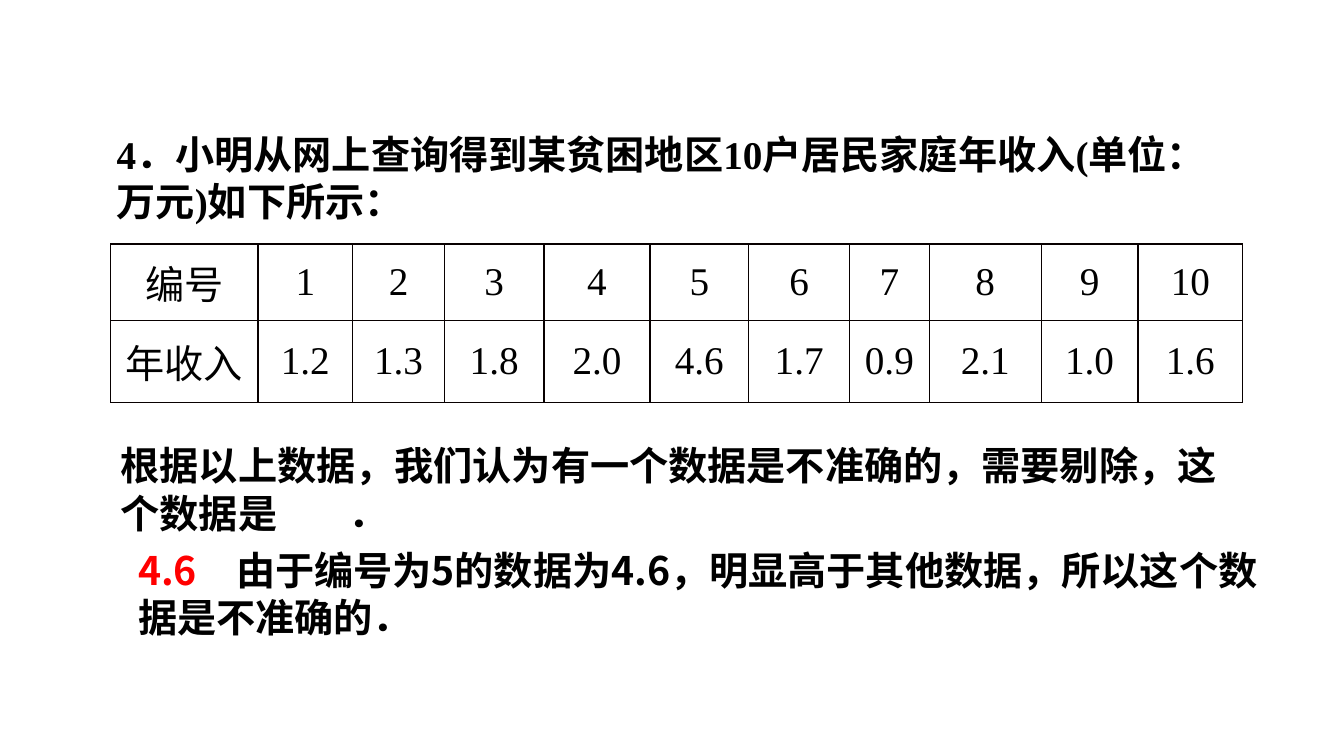
from lxml.etree import SubElement
from pptx import Presentation
from pptx.dml.color import RGBColor
from pptx.enum.text import MSO_ANCHOR as ANCHOR, MSO_AUTO_SIZE as AUTO, PP_ALIGN as ALIGN
from pptx.oxml.ns import qn
from pptx.util import Cm, Pt

BLACK = RGBColor(0, 0, 0)
RED = RGBColor(0xFF, 0, 0)
BORDER = RGBColor(0x08, 0, 0)
SANS, SERIF, CJK = "Calibri", "Times New Roman", "Noto Sans CJK SC"

INCOMES = ["1.2", "1.3", "1.8", "2.0", "4.6", "1.7", "0.9", "2.1", "1.0", "1.6"]
ROWS = [["编号", *map(str, range(1, len(INCOMES) + 1))], ["年收入", *INCOMES]]
COL_WIDTHS = [3.71, 2.39, 2.31, 2.51, 2.67, 2.49, 2.54, 2.01, 2.82, 2.44, 2.64]
ROW_HEIGHTS = [1.93, 2.06]


class SlideBuilder:
    """Holds the text style and the current slide, and adds elements to it."""

    def __init__(self, s):
        self.s = s
        self.style = {"size": Pt(28), "bold": True}

    def set_all(self, target, values):
        for name, value in values.items():
            setattr(target, name, value)

    def run(self, p, text, font, color=BLACK, **extra):
        r = p.add_run()
        r.text = text
        self.set_all(r.font, {**self.style, "name": font, **extra})
        r.font.color.rgb = color
        SubElement(r.font._element, qn("a:ea"), typeface=CJK)

    def text(self, left, top, width, height, runs, tab=None):
        sp = self.s.shapes.add_textbox(Cm(left), Cm(top), Cm(width), Cm(height))
        tf = sp.text_frame
        self.set_all(tf, {"word_wrap": True, "auto_size": AUTO.SHAPE_TO_FIT_TEXT,
                          "margin_top": Cm(0.2), "margin_bottom": Cm(0.05)})
        p = tf.paragraphs[0]
        p.line_spacing = Pt(33.8)
        if tab:
            tabs = SubElement(p._p.get_or_add_pPr(), qn("a:tabLst"))
            SubElement(tabs, qn("a:tab"), pos=str(Cm(tab)), algn="l")
        for text, font, *color in runs:
            extra = {"underline": True} if text == "\t" else {}
            self.run(p, text, font, *color, **extra)

    def borders(self, cell):
        tc_pr = cell._tc.get_or_add_tcPr()
        for side in ("lnL", "lnR", "lnT", "lnB"):
            ln = SubElement(tc_pr, qn(f"a:{side}"), w=str(Pt(1)))
            fill = SubElement(ln, qn("a:solidFill"))
            SubElement(fill, qn("a:srgbClr"), val=str(BORDER))

    def table(self, left, top, rows, widths, heights):
        frame = self.s.shapes.add_table(len(rows), len(widths), Cm(left), Cm(top),
                                        Cm(sum(widths)), Cm(sum(heights)))
        table = frame.table
        self.set_all(table, {"first_row": False, "horz_banding": False})
        for col, width in zip(table.columns, widths):
            col.width = Cm(width)
        for row, height, values in zip(table.rows, heights, rows):
            row.height = Cm(height)
            for cell, value in zip(row.cells, values):
                self.set_all(cell, {"vertical_anchor": ANCHOR.MIDDLE,
                                    "margin_left": Cm(0.18), "margin_right": Cm(0.18),
                                    "margin_top": 0, "margin_bottom": 0})
                self.borders(cell)
                cell.fill.background()
                p = cell.text_frame.paragraphs[0]
                p.alignment = ALIGN.CENTER
                self.run(p, value, SERIF, bold=False)


def main():
    prs = Presentation()
    prs.slide_width, prs.slide_height = Cm(33.87), Cm(19.05)
    b = SlideBuilder(prs.slides.add_slide(prs.slide_layouts[6]))
    b.text(2.69, 3.07, 28.7, 2.64, [
        ("4", SERIF), ("．小明从网上查询得到某贫困地区", SANS), ("10", SERIF),
        ("户居民家庭年收入", SANS), ("(", SERIF), ("单位：万元", SANS),
        (")", SERIF), ("如下所示：", SANS)])
    b.table(2.79, 6.15, ROWS, COL_WIDTHS, ROW_HEIGHTS)
    b.text(2.79, 10.92, 28.6, 2.64, [
        ("根据以上数据，我们认为有一个数据是不准确的，需要剔除，这个数据是", SANS),
        ("\t", SERIF), ("．", SANS)], tab=5.75)
    b.text(3.23, 13.56, 29.34, 2.64, [
        ("4.6", CJK, RED),
        ("　由于编号为5的数据为4.6，明显高于其他数据，所以这个数据是不准确的．", CJK)])
    prs.save("out.pptx")


if __name__ == "__main__":
    main()
